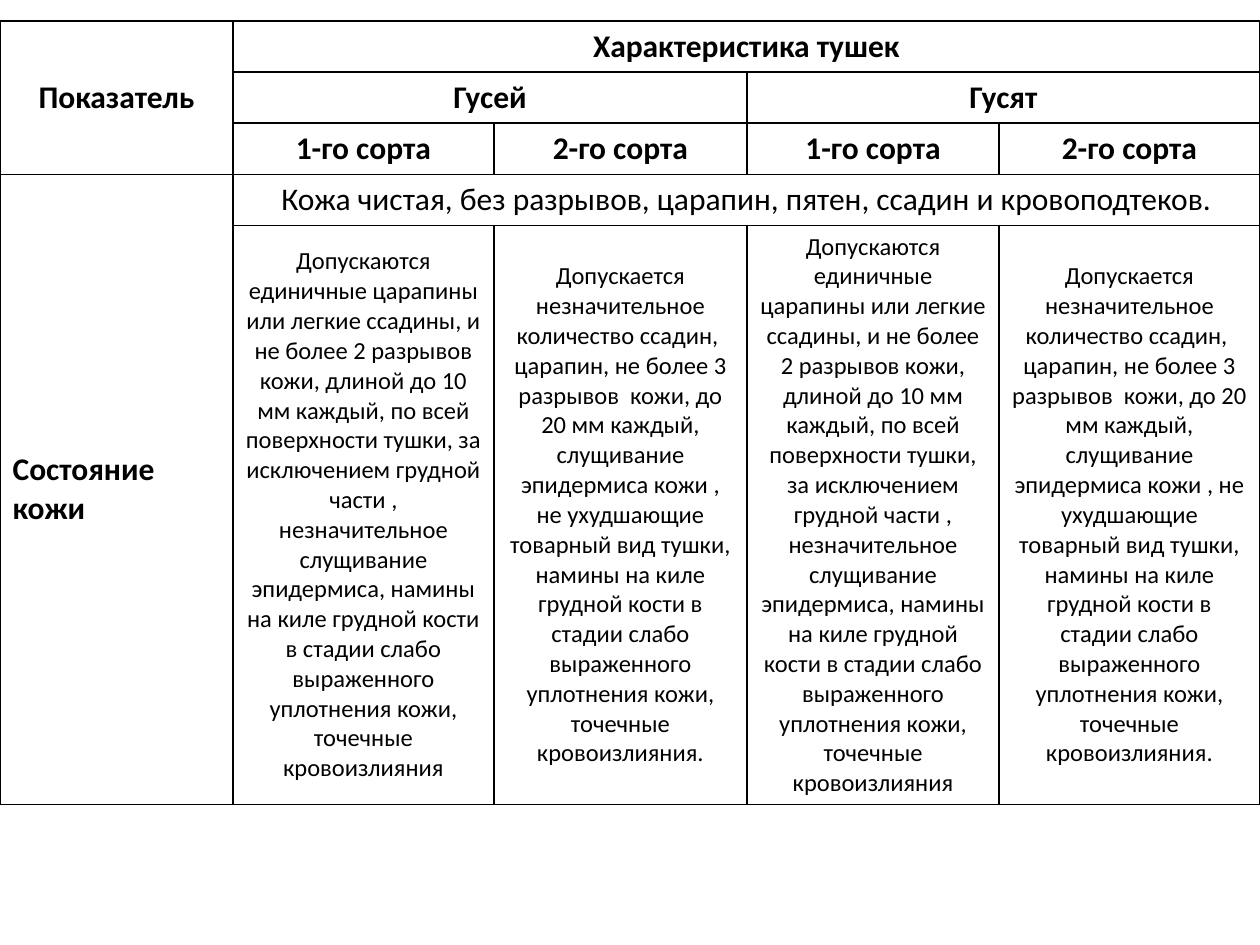
from lxml.etree import SubElement
from pptx import Presentation
from pptx.dml.color import RGBColor
from pptx.enum.text import MSO_ANCHOR, PP_ALIGN
from pptx.oxml.ns import qn
from pptx.util import Pt

THEME = {"font": "Calibri", "ink": "000000", "head": 18, "body": 14, "line": 1}

# Content
FIRST_GRADE = (
    "Допускаются единичные царапины или легкие ссадины, и не более 2 разрывов "
    "кожи, длиной до 10 мм каждый, по всей поверхности тушки, за исключением "
    "грудной части , незначительное слущивание эпидермиса, намины на киле "
    "грудной кости в стадии слабо выраженного уплотнения кожи, точечные "
    "кровоизлияния"
)
SECOND_GRADE = (
    "Допускается незначительное количество ссадин,  царапин, не более 3 "
    "разрывов  кожи, до 20 мм каждый, слущивание эпидермиса кожи , не "
    "ухудшающие товарный вид тушки, намины на киле грудной кости в стадии "
    "слабо выраженного уплотнения кожи, точечные кровоизлияния."
)
SKIN = "Кожа чистая, без разрывов, царапин, пятен, ссадин и кровоподтеков."
BOLD = {"bold": True}
BODY = {"size": THEME["body"]}

# Row, column, rows spanned, columns spanned, text, format
CELLS = [
    (0, 0, 3, 1, "Показатель", BOLD),
    (0, 1, 1, 4, "Характеристика тушек", BOLD),
    (1, 1, 1, 2, "Гусей", BOLD),
    (1, 3, 1, 2, "Гусят", BOLD),
    (3, 0, 2, 1, "Состояние кожи", {"bold": True, "align": PP_ALIGN.LEFT}),
    (3, 1, 1, 4, SKIN, {}),
]
for col in (1, 3):  # the two grades repeat for each kind of bird
    CELLS += [
        (2, col, 1, 1, "1-го сорта", BOLD),
        (2, col + 1, 1, 1, "2-го сорта", BOLD),
        (4, col, 1, 1, FIRST_GRADE, BODY),
        (4, col + 1, 1, 1, SECOND_GRADE, BODY),
    ]

# Layout
SLIDE_W, SLIDE_H = 720, 540
TABLE_TOP = 12
COL_WIDTHS = [133.2, 149.04, 144.72, 144, 149.04]
ROW_HEIGHTS = [27.4] * 4 + [331]


def write(cell, text, size=THEME["head"], bold=False, align=PP_ALIGN.CENTER):
    cell.vertical_anchor = MSO_ANCHOR.MIDDLE
    p = cell.text_frame.paragraphs[0]
    p.alignment = align
    r = p.add_run()
    r.text = text
    r.font.name = THEME["font"]
    r.font.size = Pt(size)
    r.font.bold = bold
    r.font.color.rgb = RGBColor.from_string(THEME["ink"])


def add_borders(cell):
    tc_pr = cell._tc.get_or_add_tcPr()
    for side in ("a:lnL", "a:lnR", "a:lnT", "a:lnB"):
        ln = SubElement(tc_pr, qn(side), w=str(Pt(THEME["line"])))
        fill = SubElement(ln, qn("a:solidFill"))
        SubElement(fill, qn("a:srgbClr"), val=THEME["ink"])


def main():
    prs = Presentation()
    prs.slide_width, prs.slide_height = Pt(SLIDE_W), Pt(SLIDE_H)
    slide = prs.slides.add_slide(prs.slide_layouts[6])

    # Empty grid
    table = slide.shapes.add_table(
        len(ROW_HEIGHTS), len(COL_WIDTHS),
        Pt(0), Pt(TABLE_TOP), Pt(sum(COL_WIDTHS)), Pt(sum(ROW_HEIGHTS)),
    ).table
    table.first_row = table.horz_banding = False
    for column, width in zip(table.columns, COL_WIDTHS):
        column.width = Pt(width)
    for row, height in zip(table.rows, ROW_HEIGHTS):
        row.height = Pt(height)
    for cell in table.iter_cells():
        add_borders(cell)
        cell.fill.background()

    # Merged cells and text
    for row, col, row_span, col_span, text, style in CELLS:
        cell = table.cell(row, col)
        if row_span * col_span > 1:
            cell.merge(table.cell(row + row_span - 1, col + col_span - 1))
        write(cell, text, **style)

    prs.save("out.pptx")


if __name__ == "__main__":
    main()
